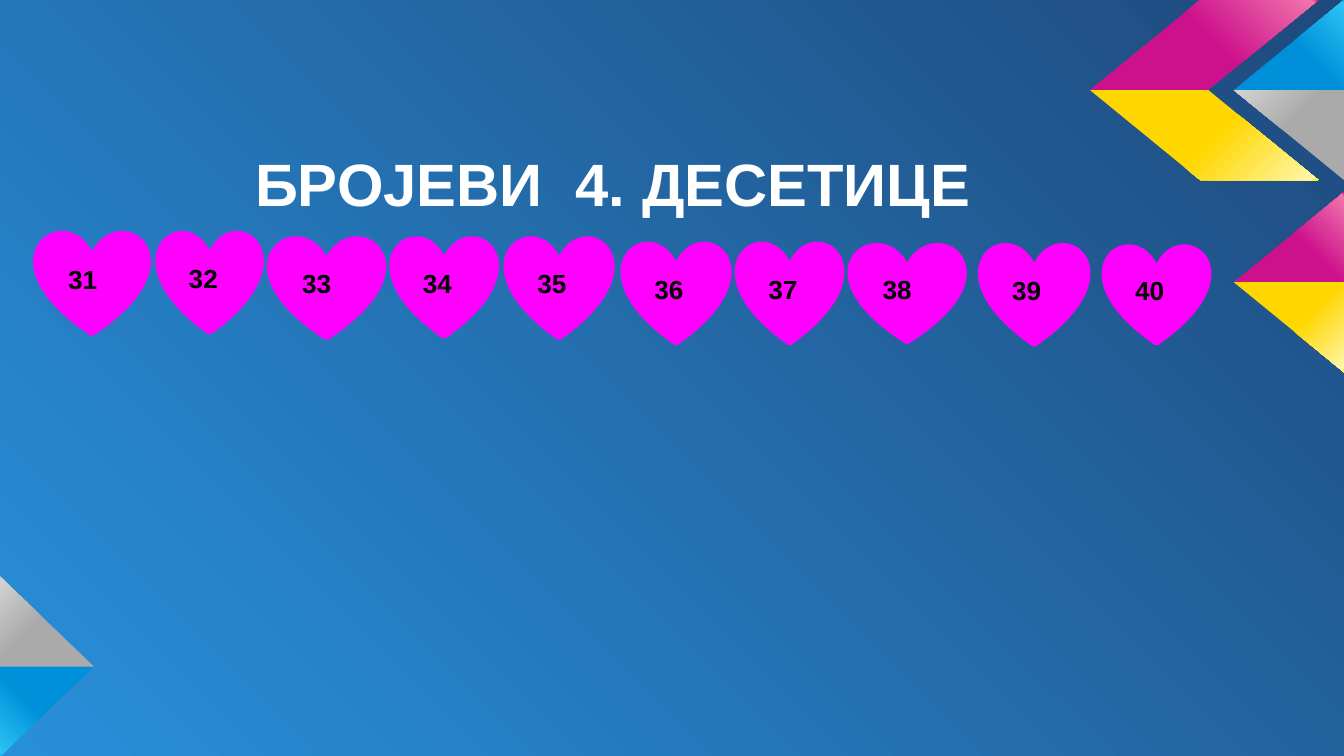
from lxml import etree
from pptx import Presentation
from pptx import util as u
from pptx.dml.color import RGBColor
from pptx.enum import shapes, text
from pptx.oxml import ns

WHITE = RGBColor(0xFF, 0xFF, 0xFF)
BLACK = RGBColor(0x00, 0x00, 0x00)
FUCHSIA = RGBColor(0xFF, 0x00, 0xFF)
SKY = RGBColor(0x28, 0x90, 0xDA)
NAVY = RGBColor(0x1F, 0x49, 0x7D)


def ribbon(base, light, end):
    colors = [RGBColor.from_string(code) for code in (base, base, light, end)]
    return list(zip((0, 54, 98, 100), colors))


CYAN = ribbon("0090DA", "2BC4F3", "00AEEE")
GRAY = ribbon("AAAAAA", "D2D2D2", "B9B9B9")
MAGENTA = ribbon("CD118C", "F074AC", "EB008B")
YELLOW = ribbon("FFD700", "FFF7A9", "FFF100")

TITLE = "БРОЈЕВИ  4. ДЕСЕТИЦЕ"
FIRST_NUMBER = 31
HEARTS = [
    (0.27, 1.73, 0.83, 0.75), (1.18, 1.73, 0.76, 0.74),
    (2.01, 1.77, 0.84, 0.74), (2.92, 1.77, 0.77, 0.73),
    (3.77, 1.77, 0.78, 0.74), (4.64, 1.81, 0.78, 0.74),
    (5.49, 1.81, 0.77, 0.74), (6.33, 1.82, 0.84, 0.72),
    (7.30, 1.82, 0.79, 0.74), (8.22, 1.83, 0.77, 0.72),
]

RISE = 0.67
LEFT_TIP = [(0.7, 0), (0, RISE), (0, 0)]
RIGHT_TIP = [(9.18, 0), (10, RISE), (10, 0)]
BAND = [(8.11, 0), (8.93, RISE), (9.81, RISE), (8.99, 0)]
CHEVRONS = [
    (4.96, LEFT_TIP, (GRAY, 225), (CYAN, 135)),
    (0.67, RIGHT_TIP, (CYAN, 315), (GRAY, 225)),
    (0.67, BAND, (MAGENTA, 315), (YELLOW, 45)),
    (2.1, RIGHT_TIP, (MAGENTA, 315), (YELLOW, 45)),
]


def paint_gradient(fill, owner, stops, angle=None):
    fill.gradient()
    gradient = owner.xpath(".//a:gradFill")[0]
    for child in list(gradient):
        gradient.remove(child)
    stop_list = etree.SubElement(gradient, ns.qn("a:gsLst"))
    for share, color in stops:
        stop = etree.SubElement(stop_list, ns.qn("a:gs"), pos=str(share * 1000))
        etree.SubElement(stop, ns.qn("a:srgbClr"), val=str(color))
    if angle is None:
        circle = etree.SubElement(gradient, ns.qn("a:path"))
        circle.set("path", "circle")
        etree.SubElement(circle, ns.qn("a:fillToRect"), t="100000", r="100000")
    else:
        etree.SubElement(gradient, ns.qn("a:lin"), ang=str(angle * 60000), scaled="0")


def add_half(page, middle, outline, direction, stops, angle):
    points = [(u.Inches(x), u.Inches(middle + direction * rise)) for x, rise in outline]
    builder = page.shapes.build_freeform(*points[0])
    builder.add_line_segments(points[1:], close=True)
    half = builder.convert_to_shape()
    half.shadow.inherit = False
    half.line.fill.background()
    paint_gradient(half.fill, half._element, stops, angle)


def write(box, words, size, color):
    frame = box.text_frame
    frame.margin_left = frame.margin_right = u.Inches(0.1)
    frame.margin_top = frame.margin_bottom = u.Inches(0.1)
    frame.word_wrap = True
    para = frame.paragraphs[0]
    para.alignment = text.PP_ALIGN.LEFT
    span = para.add_run()
    span.text = words
    span.font.name = "Arial"
    span.font.size = u.Pt(size)
    span.font.bold = True
    span.font.color.rgb = color


def add_heart(page, number, place):
    heart = page.shapes.add_shape(shapes.MSO_SHAPE.HEART, *map(u.Inches, place))
    heart.shadow.inherit = False
    heart.fill.solid()
    heart.fill.fore_color.rgb = FUCHSIA
    heart.line.color.rgb = FUCHSIA
    heart.line.width = u.Pt(3)
    heart.text_frame.vertical_anchor = text.MSO_ANCHOR.MIDDLE
    write(heart, str(number), 14, BLACK)


def main():
    deck = Presentation()
    deck.slide_width = u.Inches(10)
    deck.slide_height = deck.slide_width * 9 // 16
    page = deck.slides.add_slide(deck.slide_layouts[6])
    paint_gradient(page.background.fill, page._element, [(0, SKY), (100, NAVY)])

    for middle, outline, upper, lower in CHEVRONS:
        add_half(page, middle, outline, -1, *upper)
        add_half(page, middle, outline, 1, *lower)

    title = page.shapes.add_textbox(*map(u.Inches, (1.8, 0.99, 7.54, 0.7)))
    write(title, TITLE, 32, WHITE)

    for number, place in enumerate(HEARTS, FIRST_NUMBER):
        add_heart(page, number, place)
    deck.save("out.pptx")


if __name__ == "__main__":
    main()
